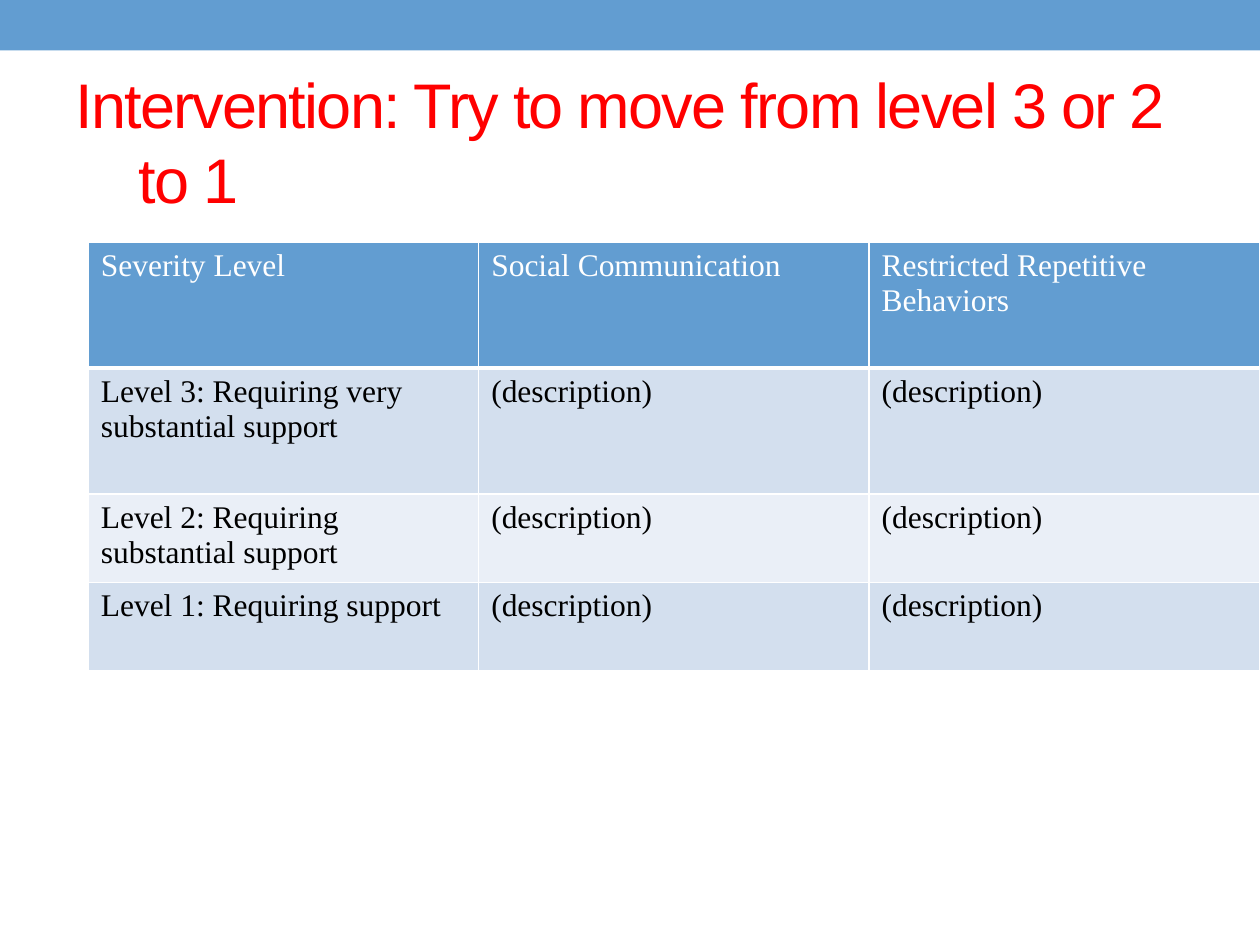
from lxml import etree
from pptx import Presentation
from pptx.dml.color import RGBColor
from pptx.enum.shapes import MSO_SHAPE
from pptx.enum.text import MSO_ANCHOR
from pptx.oxml.ns import qn
from pptx.util import Cm, Pt

RECT = MSO_SHAPE.RECTANGLE
MIDDLE = MSO_ANCHOR.MIDDLE

BLUE = RGBColor(0x62, 0x9D, 0xD1)
PALE = RGBColor(0xD3, 0xDF, 0xEE)
LIGHT = RGBColor(0xEA, 0xEF, 0xF7)
WHITE = RGBColor(0xFF, 0xFF, 0xFF)
BLACK = RGBColor(0, 0, 0)
RED = RGBColor(0xFF, 0, 0)

# Content
TITLE = "Intervention: Try to move from level 3 or 2 \t\t\tto 1"
HEAD = ["Severity Level", "Social Communication", "Restricted Repetitive Behaviors"]
LEVELS = [
    "Level 3: Requiring very substantial support",
    "Level 2: Requiring substantial support",
    "Level 1: Requiring support",
]
ROWS = [HEAD] + [[level, "(description)", "(description)"] for level in LEVELS]

# Layout in centimetres
WIDE, HIGH = 25.4, 19.05
BAR = 1.02
TITLE_BOX = (1.27, 1.47, 22.86, 2.74)
LEFT, TOP, COL = 1.78, 4.88, 7.87
HEIGHTS = [2.54, 2.54, 1.78, 1.78]

# Text formats
TITLE_FONT = {"name": "Arial", "size": Pt(36)}
CELL_FONT = {"name": "Times New Roman", "size": Pt(18)}


def style(run, form, color):
    for key, value in form.items():
        setattr(run.font, key, value)
    run.font.color.rgb = color


def border(cell, base):
    """Draw white cell edges, with the bottom one base points wide."""
    props = cell._tc.get_or_add_tcPr()
    edges = {"lnL": 1, "lnR": 1, "lnT": 1, "lnB": base}
    for spot, (tag, width) in enumerate(edges.items()):
        line = etree.Element(qn("a:" + tag), w=str(Pt(width)))
        fill = etree.SubElement(line, qn("a:solidFill"))
        etree.SubElement(fill, qn("a:srgbClr"), val=str(WHITE))
        props.insert(spot, line)


deck = Presentation()
deck.slide_width, deck.slide_height = Cm(WIDE), Cm(HIGH)
slide = deck.slides.add_slide(deck.slide_layouts[6])

# Top bar
bar = slide.shapes.add_shape(RECT, 0, 0, Cm(WIDE), Cm(BAR))
bar.shadow.inherit = False
bar.fill.solid()
bar.fill.fore_color.rgb = BLUE
bar.line.fill.background()

# Title
frame = slide.shapes.add_textbox(*map(Cm, TITLE_BOX)).text_frame
frame.word_wrap = True
frame.vertical_anchor = MIDDLE
run = frame.paragraphs[0].add_run()
run.text = TITLE
style(run, TITLE_FONT, RED)
run._r.get_or_add_rPr().set("spc", "-100")

# Severity table
table = slide.shapes.add_table(
    len(ROWS), len(HEAD), Cm(LEFT), Cm(TOP), Cm(COL * len(HEAD)), Cm(sum(HEIGHTS))
).table
for col in table.columns:
    col.width = Cm(COL)
for i, (row, high) in enumerate(zip(ROWS, HEIGHTS)):
    table.rows[i].height = Cm(high)
    band = BLUE if i == 0 else PALE if i % 2 else LIGHT
    for j, text in enumerate(row):
        cell = table.cell(i, j)
        cell.fill.solid()
        cell.fill.fore_color.rgb = band
        border(cell, 1 if i else 3)
        run = cell.text_frame.paragraphs[0].add_run()
        run.text = text
        style(run, CELL_FONT, BLACK if i else WHITE)
        run.font.bold = False

deck.save("out.pptx")
